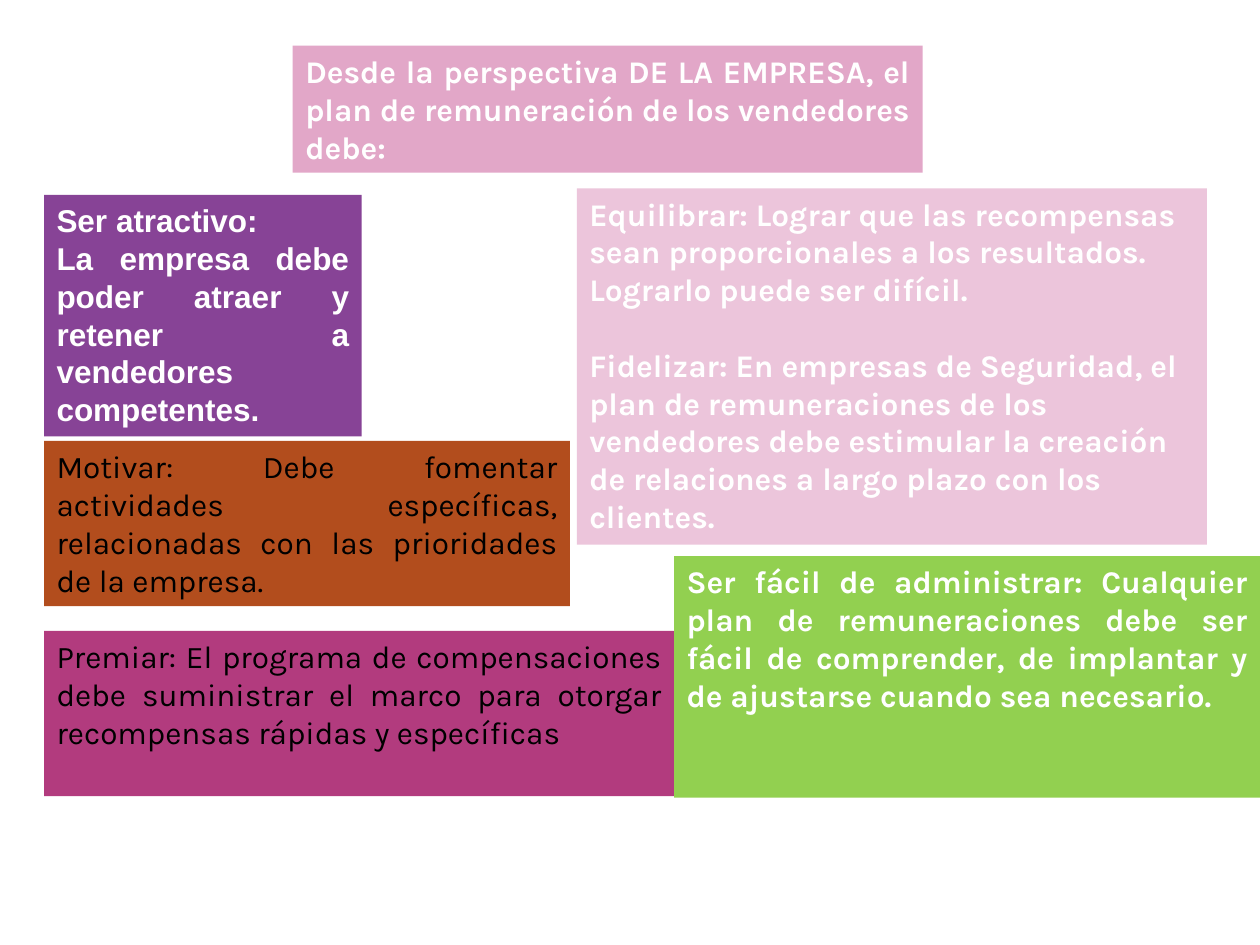
import pptx
import pptx.dml.color
import pptx.enum.shapes
import pptx.enum.text
import pptx.util

Cm = pptx.util.Cm
Pt = pptx.util.Pt
RGBColor = pptx.dml.color.RGBColor
Align = pptx.enum.text.PP_ALIGN

WHITE = RGBColor(0xFF, 0xFF, 0xFF)
BLACK = RGBColor(0x00, 0x00, 0x00)
ROSE = RGBColor(0xE2, 0xA7, 0xC8)
PURPLE = RGBColor(0x87, 0x43, 0x96)
RUST = RGBColor(0xB2, 0x4D, 0x1D)
MAGENTA = RGBColor(0xB2, 0x3B, 0x7E)
PALE_PINK = RGBColor(0xEC, 0xC5, 0xDB)
GREEN = RGBColor(0x92, 0xD0, 0x50)

LEFT_EDGE = 0.89


class PlanSlide:
    size = Pt(18)
    font = "Karla"

    def __init__(self, deck):
        self.page = deck.slides.add_slide(deck.slide_layouts[5])

    def title(self, place, fill, text):
        box = self.page.shapes.title
        box.left, box.top, box.width, box.height = map(Cm, place)
        self.paint(box, fill)
        self.add_text(box, [text])

    def panel(self, place, fill, texts, **style):
        box = self.page.shapes.add_shape(
            pptx.enum.shapes.MSO_SHAPE.RECTANGLE, *map(Cm, place))
        box.shadow.inherit = False
        self.paint(box, fill)
        self.add_text(box, texts, **style)

    def paint(self, box, fill):
        box.fill.solid()
        box.fill.fore_color.rgb = fill
        box.line.fill.background()

    def add_text(self, box, texts, color=WHITE, bold=True, font=None,
                 align=Align.JUSTIFY, gap=0):
        frame = box.text_frame
        frame.word_wrap = True
        frame.auto_size = pptx.enum.text.MSO_AUTO_SIZE.NONE
        frame.vertical_anchor = pptx.enum.text.MSO_ANCHOR.TOP
        for index, text in enumerate(texts):
            para = frame.add_paragraph() if index else frame.paragraphs[0]
            para.alignment = align
            if index:
                para.space_before = Pt(gap)
            span = para.add_run()
            span.text = text
            span.font.name = font or self.font
            span.font.size = self.size
            span.font.bold = bold
            span.font.color.rgb = color


def main():
    deck = pptx.Presentation()
    deck.slide_width = Cm(25.4)
    deck.slide_height = Cm(19.05)
    plan = PlanSlide(deck)

    plan.title((5.9, 0.92, 12.7, 2.56), ROSE,
               "Desde la perspectiva DE LA EMPRESA, el plan de remuneración "
               "de los vendedores debe:")
    plan.panel((LEFT_EDGE, 3.93, 6.4, 4.87), PURPLE,
               ["Ser atractivo:",
                "La empresa debe poder atraer y retener a vendedores "
                "competentes."], font="Arial")
    plan.panel((LEFT_EDGE, 8.89, 10.6, 3.33), RUST,
               ["Motivar: Debe fomentar actividades específicas, relacionadas "
                "con las prioridades de la empresa."],
               color=BLACK, bold=False)
    plan.panel((LEFT_EDGE, 12.72, 12.7, 3.33), MAGENTA,
               ["Premiar: El programa de compensaciones debe suministrar el "
                "marco para otorgar recompensas rápidas y específicas"],
               color=BLACK, bold=False)
    plan.panel((11.63, 3.8, 12.7, 7.18), PALE_PINK,
               ["Equilibrar: Lograr que las recompensas sean proporcionales "
                "a los resultados. Lograrlo puede ser difícil.",
                "Fidelizar: En empresas de Seguridad, el plan de "
                "remuneraciones de los vendedores debe estimular la creación "
                "de relaciones a largo plazo con los clientes."],
               align=Align.LEFT, gap=21.6)
    plan.panel((13.59, 11.21, 11.81, 4.87), GREEN,
               ["Ser fácil de administrar: Cualquier plan de remuneraciones "
                "debe ser fácil de comprender, de implantar y de ajustarse "
                "cuando sea necesario."])

    deck.save("out.pptx")


if __name__ == "__main__":
    main()
